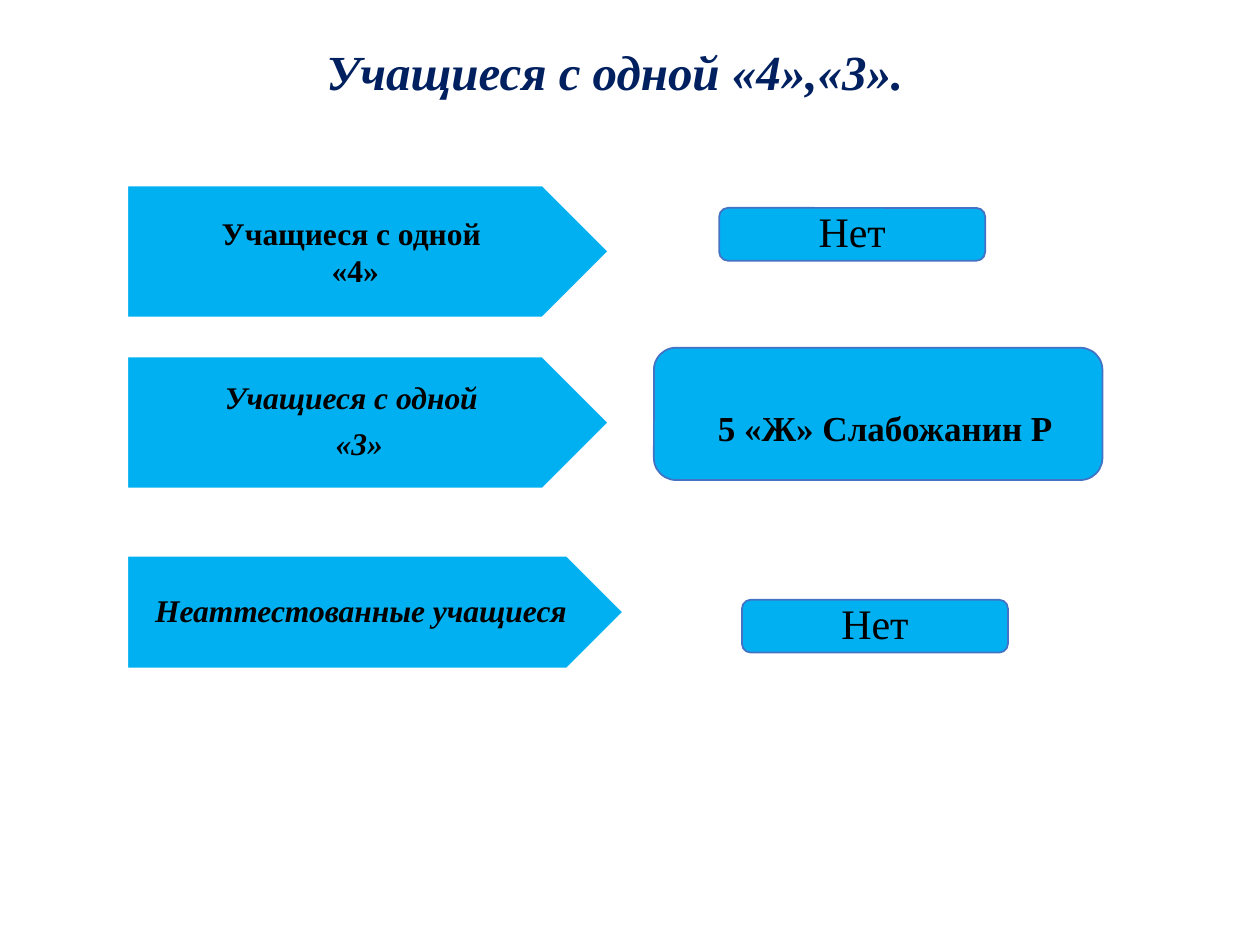
from dataclasses import dataclass

from pptx import Presentation
from pptx.dml.color import RGBColor
from pptx.enum import shapes, text
from pptx.util import Pt


@dataclass(frozen=True)
class Theme:
    font: str = "Times New Roman"
    navy: str = "002060"
    sky: str = "00B0F0"
    border: str = "4472C4"
    white: str = "FFFFFF"
    black: str = "000000"
    title_size: int = 28
    label_size: int = 18
    student_size: int = 20
    none_size: int = 24


theme = Theme()


def add_line(paragraph, words, size, color, bold=False, italic=False, spacing=1):
    paragraph.alignment = text.PP_ALIGN.CENTER
    paragraph.line_spacing = spacing
    run = paragraph.add_run()
    run.text = words
    font = run.font
    font.name, font.size = theme.font, Pt(size)
    font.bold, font.italic = bold, italic
    font.color.rgb = RGBColor.from_string(color)


def add_block(preset, box, outline, insets):
    """Add a filled shape with middle-anchored text and return its text frame."""
    block = slide.shapes.add_shape(preset, *map(Pt, box))
    block.shadow.inherit = False
    block.fill.solid()
    block.fill.fore_color.rgb = RGBColor.from_string(theme.sky)
    block.line.color.rgb = RGBColor.from_string(outline)
    block.line.width = Pt(1)
    frame = block.text_frame
    frame.word_wrap = True
    frame.vertical_anchor = text.MSO_ANCHOR.MIDDLE
    (frame.margin_left, frame.margin_top,
     frame.margin_right, frame.margin_bottom) = map(Pt, insets)
    return frame


prs = Presentation()
prs.slide_width, prs.slide_height = Pt(720), Pt(540)
slide = prs.slides.add_slide(prs.slide_layouts[5])

# Heading
heading = slide.shapes.title
heading.left, heading.top, heading.width, heading.height = map(Pt, (72.7, 19.4, 557.3, 46.8))
heading.text_frame.vertical_anchor = text.MSO_ANCHOR.MIDDLE
add_line(heading.text_frame.paragraphs[0], "Учащиеся с одной «4»,«3».",
         theme.title_size, theme.navy, bold=True, italic=True, spacing=0.9)

# Category arrows: top, width, height, lines, italic, line spacing, space after, second-line indent
categories = [
    (106, 275, 75.4, ["Учащиеся с одной", "«4»"], False, 1, 0, 4.5),
    (203.8, 275, 75.4, ["Учащиеся с одной", "«3»"], True, 0.9, 7, 9),
    (317.6, 283.4, 64.4, ["Неаттестованные учащиеся"], True, 0.9, 0, 0),
]
for top, width, height, lines, italic, spacing, gap, indent in categories:
    label = add_block(shapes.MSO_SHAPE.PENTAGON, (72.7, top, width, height),
                      theme.white, (5, 3, 5, 3))
    for index, words in enumerate(lines):
        paragraph = label.paragraphs[0] if index == 0 else label.add_paragraph()
        add_line(paragraph, words, theme.label_size, theme.black,
                 bold=True, italic=italic, spacing=spacing)
        if index < len(lines) - 1:
            paragraph.space_after = Pt(gap)
        else:
            paragraph._p.get_or_add_pPr().set("marL", str(Pt(indent * index)))

# Results: box, insets, words, size, bold, line spacing
results = [
    ((411, 118.8, 152, 30.2), (7.2, 3.6, 7.2, 3.6), "Нет", theme.none_size, False, 0.9),
    ((373.7, 198.7, 256.3, 75.6), (17, 20, 9, 5), "5 «Ж» Слабожанин Р",
     theme.student_size, True, 1),
    ((424, 342.7, 152, 30.2), (7.2, 3.6, 7.2, 3.6), "Нет", theme.none_size, False, 0.9),
]
for box, insets, words, size, bold, spacing in results:
    answer = add_block(shapes.MSO_SHAPE.ROUNDED_RECTANGLE, box, theme.border, insets)
    add_line(answer.paragraphs[0], words, size, theme.black, bold=bold, spacing=spacing)

prs.save("out.pptx")
